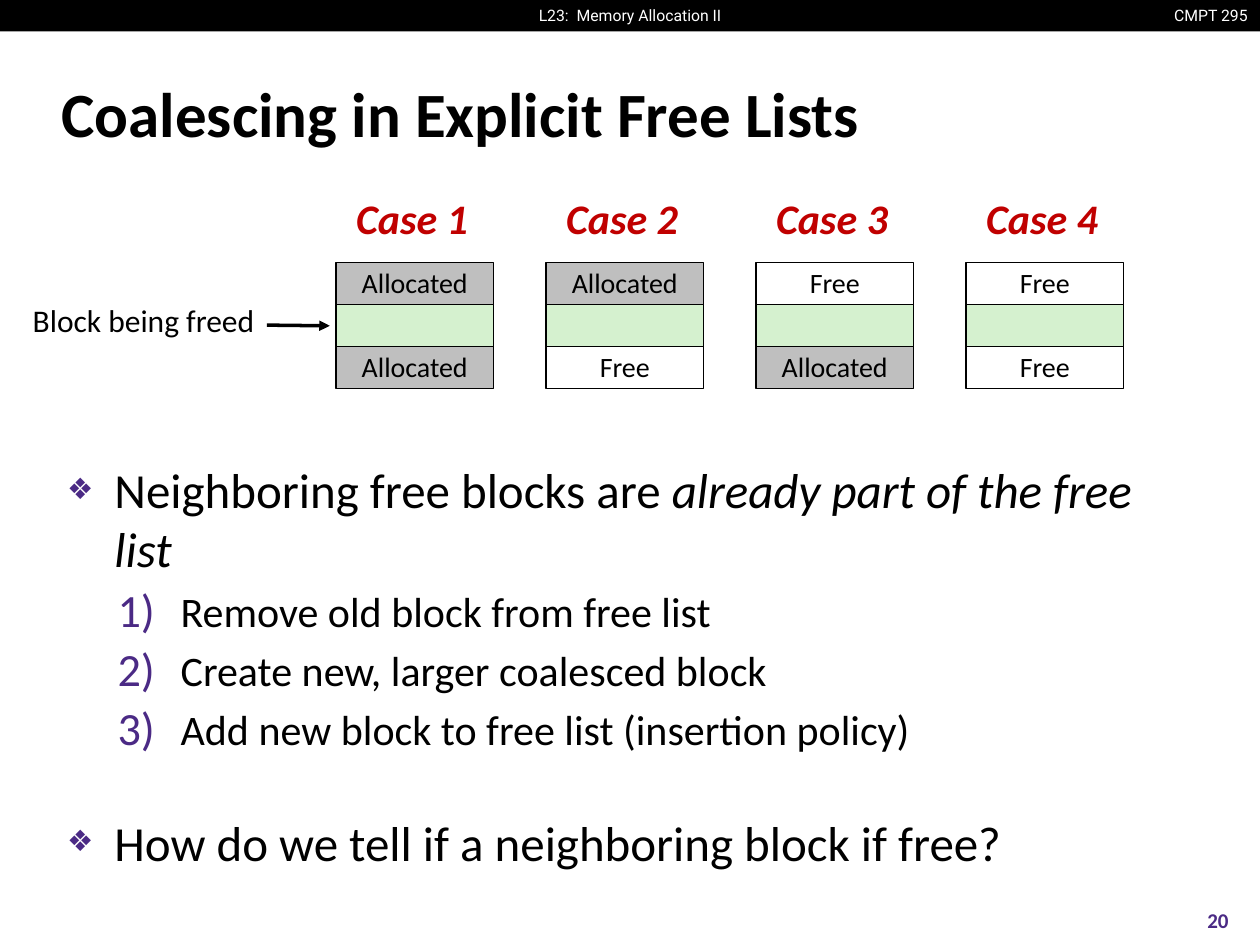
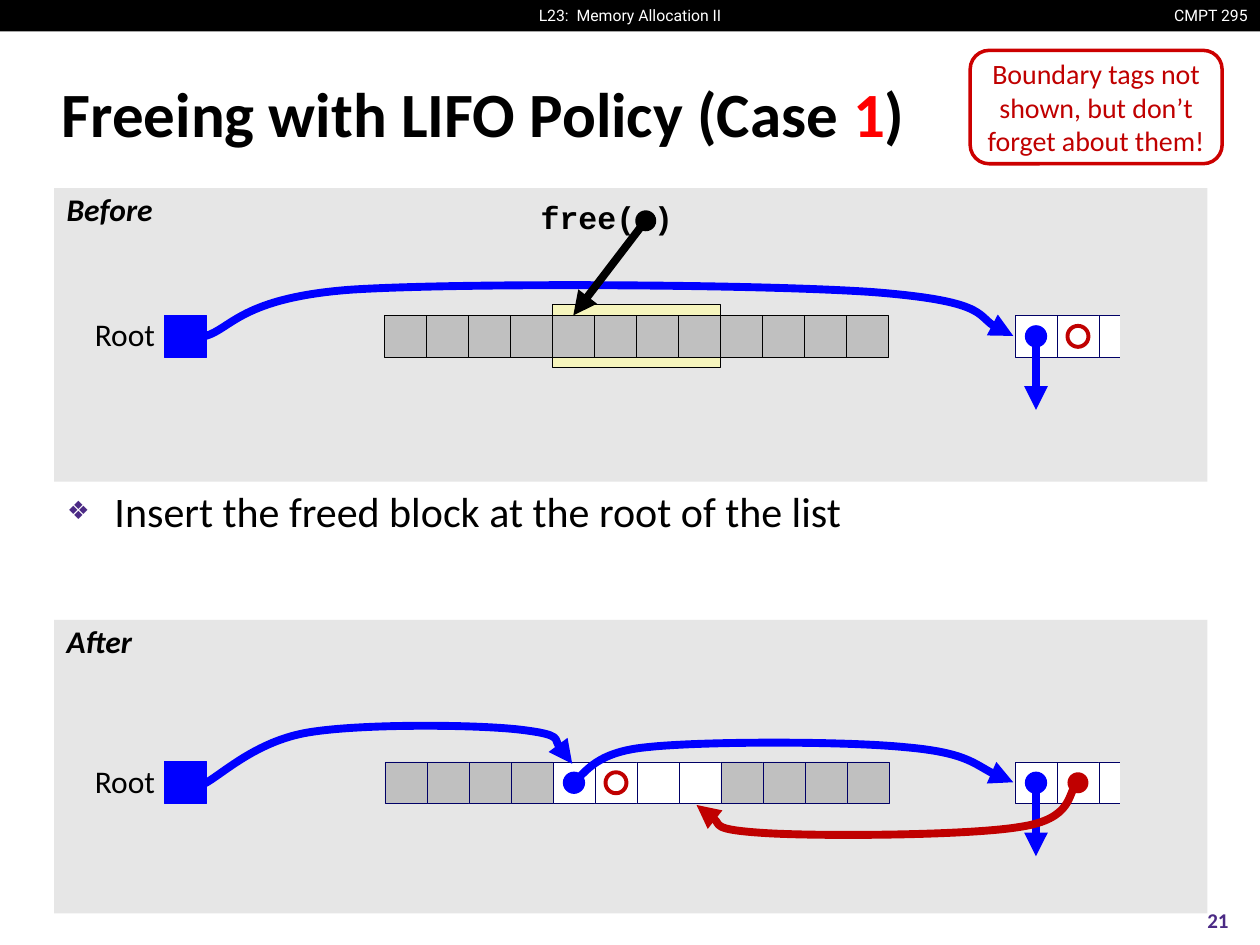
import pptx
import pptx.util
import pptx.dml.color
import pptx.enum.shapes
import pptx.enum.text
import pptx.oxml.ns
from lxml import etree

Pt = pptx.util.Pt
KIND = pptx.enum.shapes.MSO_SHAPE
ALIGN = pptx.enum.text.PP_ALIGN
ANCHOR = pptx.enum.text.MSO_ANCHOR
FIXED = pptx.enum.text.MSO_AUTO_SIZE.NONE
qn = pptx.oxml.ns.qn

INK = {
    "black": "000000", "white": "FFFFFF", "purple": "4B2A85",
    "red": "C00000", "bright": "FF0000", "frame": "CC0000",
    "blue": "0000FF", "navy": "000066", "panel": "E6E6E6",
    "taken": "BFBFBF", "used": "C0C0C0", "freed": "D5F1CF",
    "glow": "F6F5BD",
}
CELL = 24
TAIL_X = 580
FREED = range(4, 8)


def rgb(ink):
    return pptx.dml.color.RGBColor.from_string(INK[ink])


def style(run, size, ink="black", bold=False, slant=False, font="Calibri"):
    run.font.size = Pt(size)
    run.font.name = font
    run.font.bold = bold
    run.font.italic = slant
    run.font.color.rgb = rgb(ink)


def place(shape, x, y, w, h):
    shape.left, shape.top, shape.width, shape.height = map(Pt, (x, y, w, h))


def fill_text(shape, text, size, align=ALIGN.LEFT, anchor=ANCHOR.TOP,
              inset=(7.2, 3.6), lead=1.0, wrap=False, **look):
    frame = shape.text_frame
    frame.text = text
    frame.word_wrap = wrap
    frame.vertical_anchor = anchor
    frame.margin_left = frame.margin_right = Pt(inset[0])
    frame.margin_top = frame.margin_bottom = Pt(inset[1])
    para = frame.paragraphs[0]
    para.alignment = align
    para.line_spacing = lead
    style(para.runs[0], size, **look)


def label(slide, text, box, size, **look):
    shape = slide.shapes.add_textbox(*map(Pt, box))
    fill_text(shape, text, size, **look)
    return shape


def block(slide, box, fill=None, edge=None, width=0.75, kind=KIND.RECTANGLE):
    shape = slide.shapes.add_shape(kind, *map(Pt, box))
    shape.shadow.inherit = False
    if fill:
        shape.fill.solid()
        shape.fill.fore_color.rgb = rgb(fill)
    else:
        shape.fill.background()
    if edge:
        shape.line.color.rgb = rgb(edge)
        shape.line.width = Pt(width)
    else:
        shape.line.fill.background()
    return shape


def add_head(shape, ink, width):
    """Colour a line and give its end an arrowhead."""
    shape.line.color.rgb = rgb(ink)
    shape.line.width = Pt(width)
    line = shape.element.spPr.find(qn("a:ln"))
    etree.SubElement(line, qn("a:tailEnd"), type="triangle")


def arrow(slide, start, end, ink="blue", width=4.5):
    line = slide.shapes.add_connector(
        pptx.enum.shapes.MSO_CONNECTOR.STRAIGHT, *map(Pt, start + end))
    add_head(line, ink, width)
    etree.SubElement(line.element.spPr, qn("a:effectLst"))
    return line


def curve(slide, points, ink="blue"):
    """Draw joined cubic curves: a start, then three points for each."""
    pen = slide.shapes.build_freeform(*map(Pt, points[0]))
    pen.add_line_segments([tuple(map(Pt, p)) for p in points[1:]], close=False)
    shape = pen.convert_to_shape()
    shape.shadow.inherit = False
    shape.fill.background()
    add_head(shape, ink, 4.5)
    track = next(shape.element.iter(qn("a:path")))
    legs = track.findall(qn("a:lnTo"))
    for n in range(0, len(legs), 3):
        bend = etree.SubElement(track, qn("a:cubicBezTo"))
        for leg in legs[n:n + 3]:
            bend.append(leg[0])
            track.remove(leg)


def bullet(para, left, hang, size, mark=None):
    """Set indents and a bullet; without a mark, number the line."""
    props = para._p.get_or_add_pPr()
    props.set("marL", str(Pt(left)))
    props.set("indent", str(-Pt(hang)))
    tint = etree.SubElement(props, qn("a:buClr"))
    etree.SubElement(tint, qn("a:srgbClr"), val=INK["purple"])
    etree.SubElement(props, qn("a:buSzPct"), val=str(size * 1000))
    if mark:
        etree.SubElement(props, qn("a:buChar"), char=mark)
    else:
        etree.SubElement(props, qn("a:buAutoNum"), type="arabicParenR")


def add_runs(para, parts, size, bold=False):
    for text, look in parts:
        run = para.add_run()
        run.text = text
        style(run, size, bold=bold, **look)


def share_band(deck, slide):
    """Draw the top band and move it to the slide master."""
    look = {"ink": "white", "font": "Roboto"}
    band = [
        block(slide, (0, 0, 720, 18), "black"),
        label(slide, "CMPT 295", (661.7, 0, 58.3, 18), 9,
              align=ALIGN.RIGHT, **look),
        label(slide, "L23:  Memory Allocation II", (300, 0, 120, 18), 9,
              align=ALIGN.CENTER, **look),
    ]
    for shape in band:
        deck.slide_master.shapes.element.append(shape.element)


def new_slide(deck, title, number):
    slide = deck.slides.add_slide(deck.slide_layouts[1])
    head = slide.shapes.title
    place(head, 28, 34, 662, 60)
    head.text_frame.vertical_anchor = ANCHOR.MIDDLE
    head.text_frame.auto_size = FIXED
    para = head.text_frame.paragraphs[0]
    para.alignment = ALIGN.LEFT
    add_runs(para, title, 36, bold=True)
    label(slide, str(number), (672, 511, 48, 29), 12, align=ALIGN.CENTER,
          anchor=ANCHOR.MIDDLE, wrap=True, ink="purple", bold=True)
    return slide


def fill_body(slide, top, height, items):
    """Fill the list; each item is (level, size, parts, gap above)."""
    body = slide.placeholders[1]
    place(body, 31.2, top, 659, height)
    frame = body.text_frame
    frame.auto_size = FIXED
    for n, (level, size, parts, gap) in enumerate(items):
        para = frame.add_paragraph() if n else frame.paragraphs[0]
        para.level = level
        if gap:
            para.space_before = Pt(gap)
        add_runs(para, parts, size)
        if level:
            bullet(para, 64.8, 36, 110)
        else:
            bullet(para, 27, 27, 60, "❖")


def case(slide, n, above, below):
    x = 192 + 120 * n
    for row, state in enumerate((above, "", below)):
        fill = {"Allocated": "taken", "Free": "white", "": "freed"}[state]
        cell = block(slide, (x, 150 + CELL * row, 90, CELL), fill, "black", 1)
        if state:
            fill_text(cell, state, 16, align=ALIGN.CENTER,
                      anchor=ANCHOR.MIDDLE, lead=0.98)
    label(slide, f"Case {n + 1}", (x + 4.2, 108, 78.5, 36), 24, lead=0.98,
          align=ALIGN.CENTER, ink="red", bold=True, slant=True)


def panel(slide, name, y):
    block(slide, (31, y, 659, 167.8), "panel")
    label(slide, name, (31, y, 72, 29), 18, lead=0.9, bold=True, slant=True)


def root(slide, y):
    block(slide, (94, y, CELL, CELL), "blue", "blue")
    label(slide, "Root", (50.6, y, 43.2, CELL), 18, anchor=ANCHOR.MIDDLE,
          inset=(3.6, 0), lead=0.9)


def dot(slide, x, y, fill, edge=None, width=0.75):
    """Put a round mark in the middle of the cell at x, y."""
    block(slide, (x + 6, y + 6, 12, 12), fill, edge, width, KIND.OVAL)


def heap(slide, x, y, edge, holes=()):
    return [block(slide, (x + CELL * n, y, CELL, CELL),
                  "white" if n in holes else "used", edge, 0.25)
            for n in range(12)]


def tail(slide, y):
    """Draw the next free block, cut off at its right."""
    for n in range(3):
        block(slide, (TAIL_X + CELL * n, y, CELL, CELL), "white", "navy", 0.25)
    block(slide, (TAIL_X + 60, y - 6, CELL, 36), "panel")
    mid = TAIL_X + CELL / 2
    arrow(slide, (mid, y + 12), (mid, y + 54))
    dot(slide, TAIL_X, y, "blue", "blue")


def draw_before(slide, x, y):
    panel(slide, "Before", 107.5)
    root(slide, y)
    curve(slide, [(117.5, 192), (132, 188), (138, 170), (201.5, 165.5),
                  (265.5, 161.5), (436.5, 162.5), (499.5, 167),
                  (562.5, 172), (562.5, 187), (579, 192)])
    tail(slide, y)
    dot(slide, TAIL_X + CELL, y, None, "red", 2.25)
    block(slide, (x + 4 * CELL, y - 6, 4 * CELL, 36), "glow", "black")
    cells = heap(slide, x, y, "black")
    label(slide, "free( )", (305, 112, 83.5, 27.5), 18, inset=(3.6, 3.6),
          align=ALIGN.CENTER, lead=0.9, bold=True, font="Courier New")
    dot(slide, 357, 114.2, "black")
    link = arrow(slide, (369, 126), (327, y), "black")
    link.end_connect(cells[FREED[0]], 0)


def draw_after(slide, x, y):
    panel(slide, "After", 354.2)
    heap(slide, x, y, "navy", FREED)
    first = x + CELL * FREED[0]
    dot(slide, first, y, "blue", "blue")
    dot(slide, first + CELL, y, None, "red", 2.25)
    curve(slide, [(327, 447), (334, 444), (337.5, 430), (369.5, 427),
                  (401, 423.5), (483, 423.5), (517.5, 427),
                  (552, 430), (566, 443), (579, 447)])
    curve(slide, [(116.5, 448), (126.5, 443), (146, 423.5), (176.5, 418.5),
                  (206.5, 413.5), (272, 414), (297.5, 417),
                  (322.5, 420), (321, 432), (327, 436.5)])
    tail(slide, y)
    dot(slide, TAIL_X + CELL, y, "red")
    curve(slide, [(615, 448.5), (610, 453), (613.5, 468), (583, 472.5),
                  (553.5, 477.5), (467.5, 478), (436.5, 476),
                  (405.5, 474), (406, 463), (398, 460)], "red")
    root(slide, y)


def draw_cases(deck):
    slide = new_slide(deck, [("Coalescing in Explicit Free Lists", {})], 20)
    share_band(deck, slide)
    fill_body(slide, 259, 259, [
        (0, 28, [("Neighboring free blocks are ", {}),
                 ("already part of the free list", {"slant": True})], 0),
        (1, 24, [("Remove old block from free list", {})], 0),
        (1, 24, [("Create new, larger coalesced block", {})], 0),
        (1, 24, [("Add new block to free list (insertion policy)", {})], 0),
        (0, 28, [("How do we tell if a neighboring block if free?", {})],
         33.5),
    ])
    label(slide, "Block being freed", (10, 169.5, 142.5, 29), 18, lead=0.98,
          align=ALIGN.RIGHT)
    arrow(slide, (152.5, 185.8), (188.5, 186.2), "black", 2)
    states = ("Allocated", "Free")
    for n in range(4):
        case(slide, n, states[n // 2], states[n % 2])


def draw_policy(deck):
    slide = new_slide(deck, [("Freeing with LIFO Policy (Case ", {}),
                             ("1", {"ink": "bright"}), (")", {})], 21)
    fill_body(slide, 273.8, 86.5, [
        (0, 24, [("Insert the freed block at the root of the list", {})], 0)])
    draw_before(slide, 219.6, 180.2)
    draw_after(slide, 220, 435.3)
    note = block(slide, (554.4, 28.8, 144, 64.8), None, "frame", 2,
                 KIND.ROUNDED_RECTANGLE)
    fill_text(note, "Boundary tags not shown, but don’t forget about them!",
              16, align=ALIGN.CENTER, anchor=ANCHOR.MIDDLE, inset=(0, 3.6),
              wrap=True, ink="red")


def main():
    deck = pptx.Presentation()
    deck.slide_width, deck.slide_height = Pt(720), Pt(540)
    draw_cases(deck)
    draw_policy(deck)
    deck.save("out.pptx")


if __name__ == "__main__":
    main()
